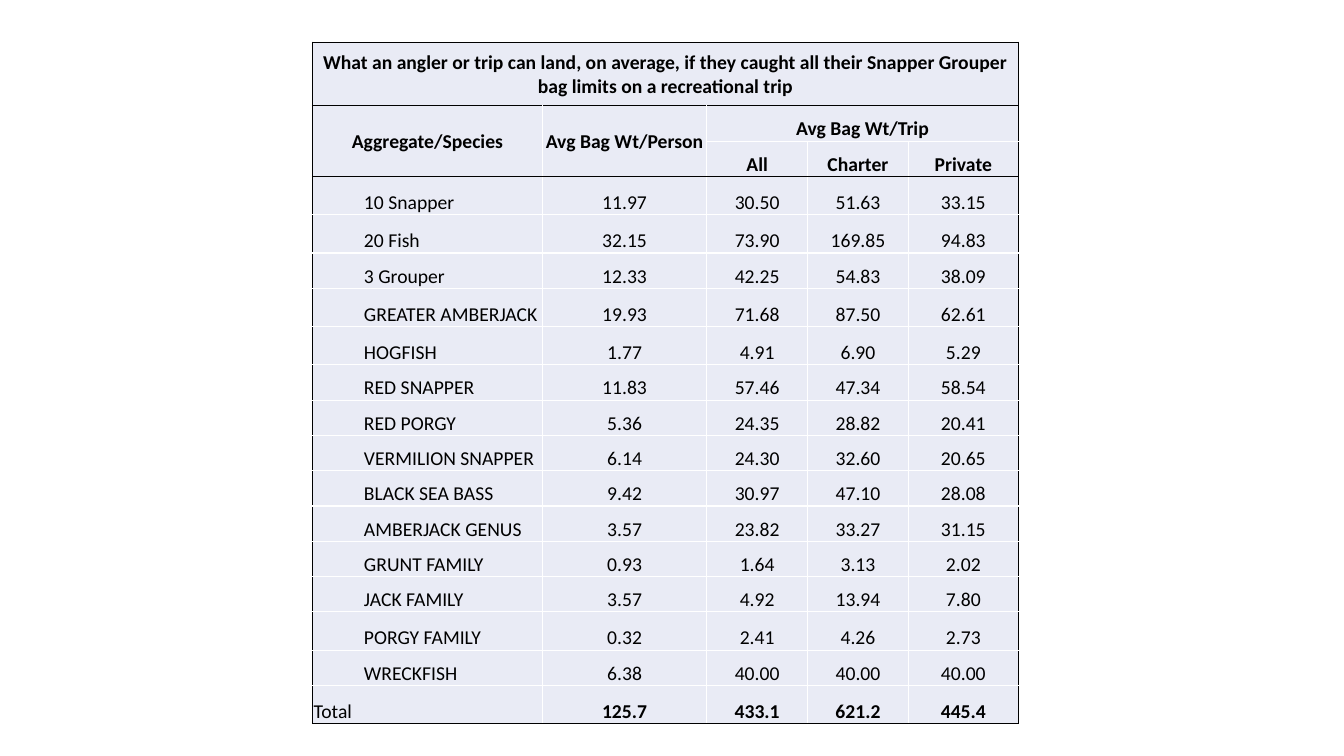
import pptx
import pptx.dml.color
import pptx.enum.text
import pptx.oxml.ns
import pptx.util
from lxml import etree

Inches = pptx.util.Inches
Align = pptx.enum.text.PP_ALIGN
Anchor = pptx.enum.text.MSO_ANCHOR

HEADINGS = [
    ["What an angler or trip can land, on average, if they caught all their "
     "Snapper Grouper bag limits on a recreational trip", "", "", "", ""],
    ["Aggregate/Species", "Avg Bag Wt/Person", "Avg Bag Wt/Trip", "", ""],
    ["", "", "All", "Charter", "Private"],
]
SPECIES = [
    ["10 Snapper", "11.97", "30.50", "51.63", "33.15"],
    ["20 Fish", "32.15", "73.90", "169.85", "94.83"],
    ["3 Grouper", "12.33", "42.25", "54.83", "38.09"],
    ["GREATER AMBERJACK", "19.93", "71.68", "87.50", "62.61"],
    ["HOGFISH", "1.77", "4.91", "6.90", "5.29"],
    ["RED SNAPPER", "11.83", "57.46", "47.34", "58.54"],
    ["RED PORGY", "5.36", "24.35", "28.82", "20.41"],
    ["VERMILION SNAPPER", "6.14", "24.30", "32.60", "20.65"],
    ["BLACK SEA BASS", "9.42", "30.97", "47.10", "28.08"],
    ["AMBERJACK GENUS", "3.57", "23.82", "33.27", "31.15"],
    ["GRUNT FAMILY", "0.93", "1.64", "3.13", "2.02"],
    ["JACK FAMILY", "3.57", "4.92", "13.94", "7.80"],
    ["PORGY FAMILY", "0.32", "2.41", "4.26", "2.73"],
    ["WRECKFISH", "6.38", "40.00", "40.00", "40.00"],
]
TOTALS = ["Total", "125.7", "433.1", "621.2", "445.4"]
BAG_LIMITS = HEADINGS + [*SPECIES, TOTALS]

COLUMN_WIDTHS = [2.28, 1.63, 1, 1, 1.09]
TALL_ROWS = {3, 4, 6, 7, 15, 17}
ROW_HEIGHTS = [0.63] + [0.38 if row in TALL_ROWS else 0.35
                        for row in range(1, len(BAG_LIMITS))]
MERGES = [((0, 0), (0, 4)), ((1, 0), (2, 0)), ((1, 1), (2, 1)), ((1, 2), (1, 4))]
TOTAL_ROW = len(BAG_LIMITS) - 1
BLACK_ROW_EDGES = {0, 1, len(HEADINGS), len(BAG_LIMITS)}
BLACK_COLUMN_EDGES = {0, len(COLUMN_WIDTHS)}


def colour(value):
    return pptx.dml.color.RGBColor.from_string(value)


class BagLimitSlide:
    font, size = "Calibri", 14
    ink, paper, band = "000000", "FFFFFF", "E9EBF5"

    def __init__(self, deck):
        self.slide = deck.slides.add_slide(deck.slide_layouts[6])

    def table(self, left, top):
        frame = self.slide.shapes.add_table(
            len(ROW_HEIGHTS), len(COLUMN_WIDTHS), Inches(left), Inches(top),
            Inches(sum(COLUMN_WIDTHS)), Inches(sum(ROW_HEIGHTS)))
        grid = frame.table
        for column, width in zip(grid.columns, COLUMN_WIDTHS):
            column.width = Inches(width)
        for row, height in zip(grid.rows, ROW_HEIGHTS):
            row.height = Inches(height)
        for first, last in MERGES:
            grid.cell(*first).merge(grid.cell(*last))
        for row, wording in enumerate(BAG_LIMITS):
            for column, text in enumerate(wording):
                cell = grid.cell(row, column)
                self.borders(cell, row, column)
                cell.fill.solid()
                cell.fill.fore_color.rgb = colour(self.band)
                if text:
                    self.text(cell, row, column, text)

    def borders(self, cell, row, column):
        height = cell.span_height if cell.is_merge_origin else 1
        width = cell.span_width if cell.is_merge_origin else 1
        edges = {
            "lnL": column in BLACK_COLUMN_EDGES,
            "lnR": column + width in BLACK_COLUMN_EDGES,
            "lnT": row in BLACK_ROW_EDGES,
            "lnB": row + height in BLACK_ROW_EDGES,
        }
        qn = pptx.oxml.ns.qn
        properties = cell._tc.get_or_add_tcPr()
        for side, black in edges.items():
            line = etree.SubElement(properties, qn(f"a:{side}"), w=str(pptx.util.Pt(1)))
            fill = etree.SubElement(line, qn("a:solidFill"))
            etree.SubElement(fill, qn("a:srgbClr"), val=self.ink if black else self.paper)

    def text(self, cell, row, column, text):
        in_heading = row < len(HEADINGS)
        is_name = column == 0 and not in_heading
        cell.margin_left = cell.margin_right = cell.margin_top = Inches(0.01)
        cell.margin_bottom = 0
        centred = row == 0 or (row == 1 and column < 2)
        cell.vertical_anchor = Anchor.MIDDLE if centred else Anchor.BOTTOM
        paragraph = cell.text_frame.paragraphs[0]
        paragraph.alignment = Align.LEFT if is_name else Align.CENTER
        if is_name and row < TOTAL_ROW:
            paragraph.level = 1
            indent = paragraph._p.get_or_add_pPr()
            indent.set("marL", str(Inches(0.5)))
            indent.set("indent", "0")
        run = paragraph.add_run()
        run.text = text
        run.font.name = self.font
        run.font.size = pptx.util.Pt(self.size)
        run.font.bold = in_heading or (row == TOTAL_ROW and not is_name)
        run.font.color.rgb = colour(self.ink)


def main():
    deck = pptx.Presentation()
    deck.slide_width, deck.slide_height = Inches(13.33), Inches(7.5)
    BagLimitSlide(deck).table(3.1, 0.42)
    deck.save("out.pptx")


if __name__ == "__main__":
    main()
